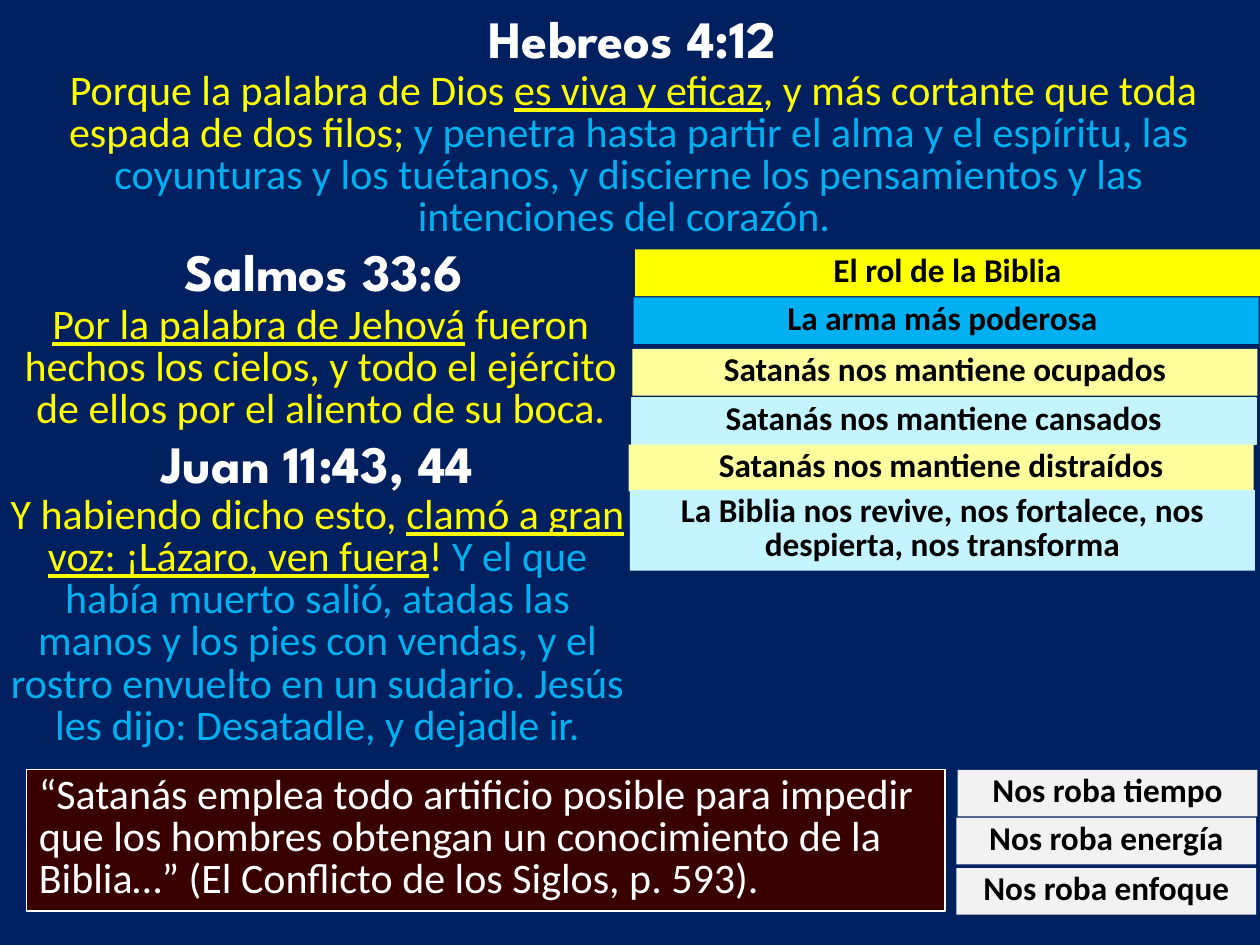
"""Build a slide of Bible verses with a column of lesson points."""
from dataclasses import dataclass

from pptx import Presentation
from pptx.dml.color import RGBColor
from pptx.enum.shapes import MSO_SHAPE
from pptx.enum.text import MSO_ANCHOR, PP_ALIGN
from pptx.util import Pt

RECT = MSO_SHAPE.RECTANGLE
TOP = MSO_ANCHOR.TOP
LEFT, MID = PP_ALIGN.LEFT, PP_ALIGN.CENTER


@dataclass(frozen=True)
class Theme:
    navy: str = "002060"
    white: str = "FFFFFF"
    black: str = "000000"
    gold: str = "FFFF00"
    blue: str = "00B0F0"
    cream: str = "FFFF9E"
    ice: str = "C3F4FF"
    gray: str = "F2F2F2"
    wine: str = "390000"
    head: str = "League Spartan"
    body: str = "Calibri"
    big: int = 30
    text: int = 24
    small: int = 19


look = Theme()
deck = Presentation()
deck.slide_width, deck.slide_height = Pt(720), Pt(540)
col, row = deck.slide_width / 100, deck.slide_height / 75
slide = deck.slides.add_slide(deck.slide_layouts[6])
slide.background.fill.solid()
slide.background.fill.fore_color.rgb = RGBColor.from_string(look.navy)


def write(shape, runs, size, face=look.body, bold=False, lead=None, align=MID):
    frame = shape.text_frame
    frame.word_wrap = True
    frame.vertical_anchor = TOP
    para = frame.paragraphs[0]
    para.alignment = align
    if lead:
        para.line_spacing = Pt(lead)
    for words, color, under in runs:
        run = para.add_run()
        run.text = words
        font = run.font
        font.name, font.size, font.bold = face, Pt(size), bold
        font.underline = under
        font.color.rgb = RGBColor.from_string(color)


def panel(x, y, w, h, fill, line=None):
    shape = slide.shapes.add_shape(
        RECT, int(x * col), int(y * row), int(w * col), int(h * row))
    shape.shadow.inherit = False
    shape.fill.solid()
    shape.fill.fore_color.rgb = RGBColor.from_string(fill)
    if line:
        shape.line.color.rgb = RGBColor.from_string(line)
        shape.line.width = Pt(0.75)
    else:
        shape.line.fill.background()
    return shape


verses = [
    (" Hebreos 4:12", 26.4, 0, (0, 5.2, 99.8, 14.5), [
        (" ", look.white, False),
        ("Porque la palabra de Dios ", look.gold, False),
        ("es viva y eficaz", look.gold, True),
        (", y más cortante que toda espada de dos filos; ", look.gold, False),
        ("y penetra hasta partir el alma y el espíritu, las coyunturas y los "
         "tuétanos, y discierne los pensamientos y las intenciones del "
         "corazón. ", look.blue, False)]),
    (" Salmos 33:6", 1.9, 18.5, (0.9, 23.8, 49.1, 11.2), [
        ("Por la palabra de Jehová", look.gold, True),
        (" fueron hechos los cielos, y todo el ejército de ellos por el "
         "aliento de su boca.", look.gold, False)]),
    (" Juan 11:43, 44", 1.4, 33.7, (-0.4, 38.9, 51.2, 21.3), [
        ("Y habiendo dicho esto, ", look.gold, False),
        ("clamó a gran voz: ¡Lázaro, ven fuera", look.gold, True),
        ("! ", look.gold, False),
        ("Y el que había muerto salió, atadas las manos y los pies con "
         "vendas, y el rostro envuelto en un sudario. Jesús les dijo: "
         "Desatadle, y dejadle ir.", look.blue, False)]),
]
for title, left, top, (x, y, w, h), runs in verses:
    head = slide.shapes.add_textbox(
        int(left * col), int(top * row), int(46.5 * col), int(11.1 * row))
    write(head, [(title, look.white, False)], look.big, look.head, True)
    verse = slide.shapes.add_textbox(
        int(x * col), int(y * row), int(w * col), int(h * row))
    write(verse, runs, look.text, lead=look.text)

quote = panel(2.1, 61.1, 72.9, 11.2, look.wine, look.white)
write(quote, [(
    "“Satanás emplea todo artificio posible para impedir que los hombres "
    "obtengan un conocimiento de la Biblia…” (El Conflicto de los Siglos, "
    "p. 593).", look.white, False)], look.text, lead=look.text, align=LEFT)

wide, slim, tall, pair = 49.6, 23.8, 3.7, 6.4
points = [
    ("El rol de la Biblia", 50.4, 19.8, wide, tall, look.gold, None),
    ("La arma más poderosa ", 50.3, 23.6, wide, tall, look.blue, None),
    ("Satanás nos mantiene ocupados", 50.2, 27.7, wide, tall, look.cream, None),
    ("Satanás nos mantiene cansados", 50.1, 31.6, wide, tall, look.ice, look.ice),
    ("Satanás nos mantiene distraídos", 49.9, 35.3, wide, tall, look.cream, None),
    ("La Biblia nos revive, nos fortalece, nos despierta, nos transforma",
     50, 38.9, wide, pair, look.ice, None),
    ("Nos roba tiempo", 76, 61.1, slim, tall, look.gray, None),
    ("Nos roba energía", 75.9, 64.9, slim, tall, look.gray, None),
    ("Nos roba enfoque", 75.9, 68.9, slim, tall, look.gray, None),
]
for words, *place in points:
    write(panel(*place), [(words, look.black, False)], look.small,
          bold=True, lead=look.small)

deck.save("out.pptx")
